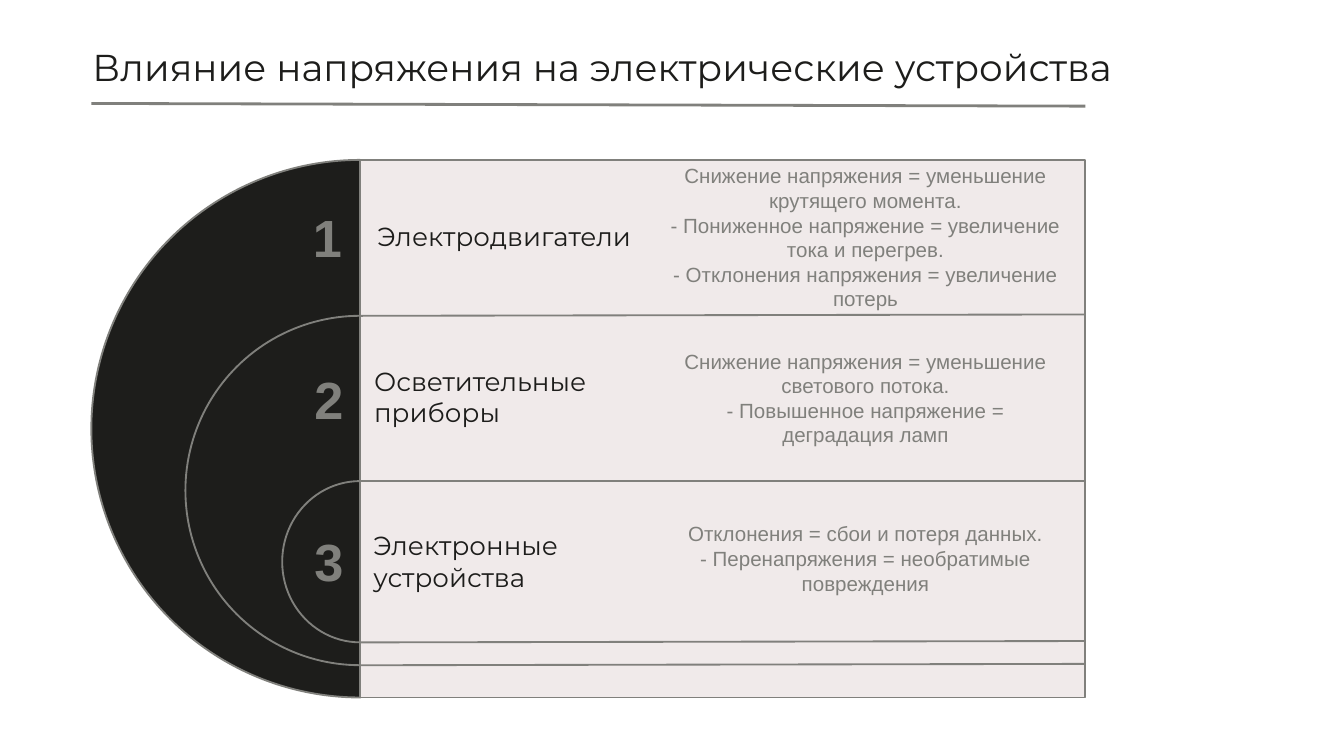
"""Build a slide on how voltage affects electrical devices."""
import pptx
import pptx.dml.color
import pptx.enum.shapes
import pptx.enum.text
import pptx.oxml
import pptx.oxml.ns
import pptx.util

RGB = pptx.dml.color.RGBColor
DARK = RGB(0x1D, 0x1D, 0x1B)
GREY = RGB(0x80, 0x80, 0x7C)
PALE = RGB(0xF0, 0xEA, 0xEA)
WHITE = RGB(0xFF, 0xFF, 0xFF)
NAVY = RGB(0x25, 0x28, 0x33)
KIND = pptx.enum.shapes.MSO_SHAPE
ALIGN = pptx.enum.text.PP_ALIGN
ANCHOR = pptx.enum.text.MSO_ANCHOR

deck = pptx.Presentation()
deck.slide_width = pptx.util.Inches(10)
deck.slide_height = deck.slide_width * 9 // 16
col = deck.slide_width / 100
row = deck.slide_height / 56.25
slide = deck.slides.add_slide(deck.slide_layouts[6])
slide.background.fill.solid()
slide.background.fill.fore_color.rgb = NAVY


def draw(kind, left, top, width, height, fill, edge=GREY):
    shape = slide.shapes.add_shape(
        kind, int(left * col), int(top * row), int(width * col), int(height * row))
    shape.shadow.inherit = False
    shape.fill.solid()
    shape.fill.fore_color.rgb = fill
    if edge is None:
        shape.line.fill.background()
    else:
        shape.line.color.rgb = edge
        shape.line.width = pptx.util.Pt(1)
    return shape


def write(text, left, top, width, height, size, face, ink, anchor,
          align=ALIGN.LEFT, bold=False, pad=0.5):
    box = slide.shapes.add_textbox(
        int(left * col), int(top * row), int(width * col), int(height * row))
    frame = box.text_frame
    frame.word_wrap = True
    frame.vertical_anchor = anchor
    frame.margin_top = frame.margin_bottom = int(pad * row)
    frame.text = text
    for para in frame.paragraphs:
        para.alignment = align
        para.font.size = pptx.util.Pt(size)
        para.font.name = face
        para.font.bold = bold
        para.font.color.rgb = ink


draw(KIND.RECTANGLE, 0, 0, 100, 56.25, WHITE, None)
write("Влияние напряжения на электрические устройства",
      5.9, 0, 93, 7.6, 20, "Montserrat", DARK, ANCHOR.BOTTOM, pad=1)

pies = [(6.8, 11.9, 40, 40), (13.8, 23.5, 26, 26), (21, 35.8, 11.6, 12)]
for place in pies:
    pie = draw(KIND.PIE, *place, DARK)
    pie.adjustments[0] = 54
    pie.adjustments[1] = 162

edge, end = 26.8, 80.75
draw(KIND.RECTANGLE, edge, 11.9, end - edge, 40, PALE)

rules = [(6.8, 7.7, 7.9, 1.5), (edge, 49.5, 49.4, 1), (edge, 47.8, 47.7, 1),
         (edge, 35.8, 35.8, 1), (edge, 23.5, 23.4, 1)]
for left, start, stop, weight in rules:
    rule = slide.shapes.add_connector(
        pptx.enum.shapes.MSO_CONNECTOR.STRAIGHT,
        int(left * col), int(start * row), int(end * col), int(stop * row))
    rule.line.color.rgb = GREY
    rule.line.width = pptx.util.Pt(weight)
    rule._element.spPr.append(pptx.oxml.parse_xml(
        "<a:effectLst %s/>" % pptx.oxml.ns.nsdecls("a")))

items = [
    ("Электродвигатели", 27.1, 17.6, 22.3,
     "Снижение напряжения = уменьшение крутящего момента.\n"
     "- Пониженное напряжение = увеличение тока и перегрев.\n"
     "- Отклонения напряжения = увеличение потерь"),
    ("Осветительные приборы", 26.85, 29.5, 22.4,
     "Снижение напряжения = уменьшение светового потока.\n"
     "- Повышенное напряжение = деградация ламп"),
    ("Электронные устройства", 26.8, 41.75, 22.4,
     "Отклонения = сбои и потеря данных.\n"
     "- Перенапряжения = необратимые повреждения"),
]
for index, (name, left, mid, side, notes) in enumerate(items):
    write(name, left, mid - 1.7, 21.9, 3.4, 14, "Montserrat", DARK, ANCHOR.MIDDLE)
    write(notes, 48.75, 16.3 + index * 11.95, 31.3, 2.7, 11, "Arial", GREY,
          ANCHOR.MIDDLE, ALIGN.CENTER)
    write(str(index + 1), side, 14.8 + index * 12.05, 2.6, 5.7, 28, "Arial", GREY,
          ANCHOR.TOP, bold=True)

deck.save("out.pptx")
